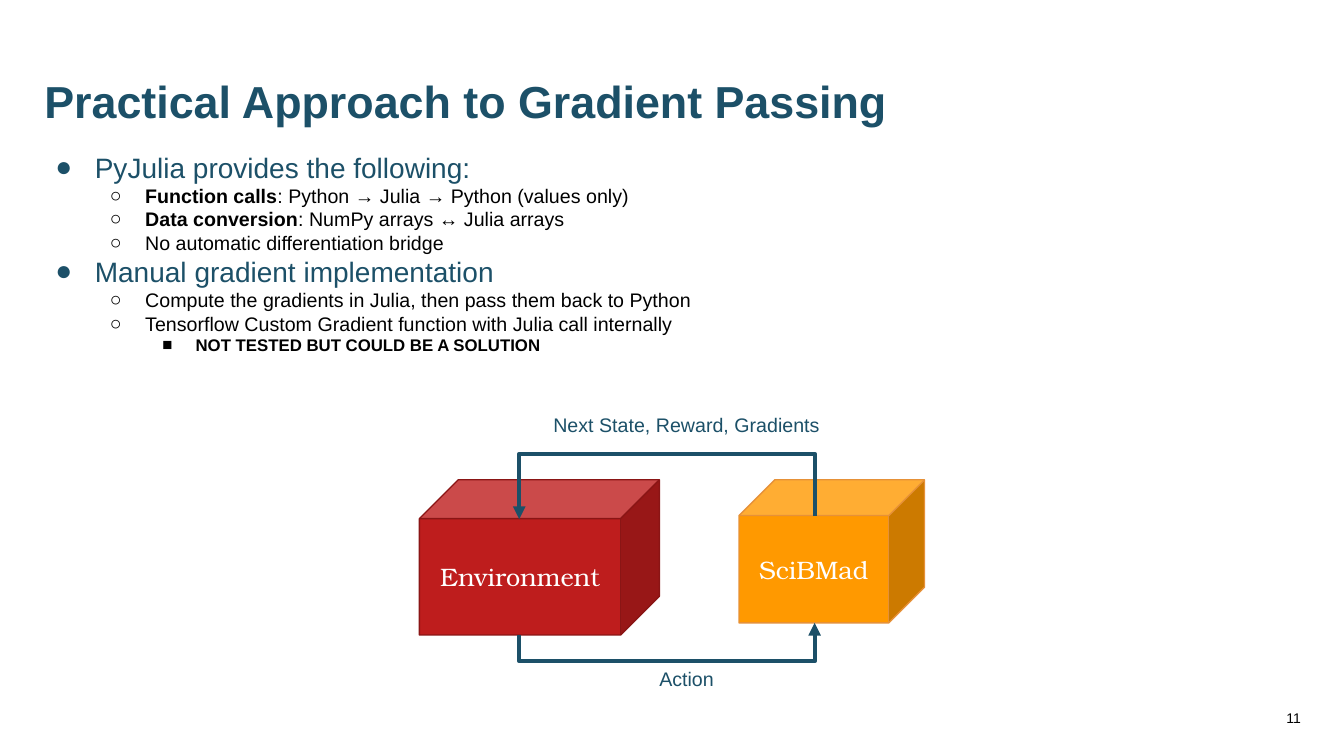
from lxml import etree
from pptx import Presentation
from pptx.dml.color import RGBColor
from pptx.enum.shapes import MSO_CONNECTOR, MSO_SHAPE
from pptx.enum.text import MSO_ANCHOR, MSO_AUTO_SIZE, PP_ALIGN
from pptx.oxml.ns import qn
from pptx.util import Inches, Pt

ELBOW, CUBE = MSO_CONNECTOR.ELBOW, MSO_SHAPE.CUBE
TOP, MIDDLE, BOTTOM = MSO_ANCHOR.TOP, MSO_ANCHOR.MIDDLE, MSO_ANCHOR.BOTTOM
LEFT, CENTER, RIGHT = PP_ALIGN.LEFT, PP_ALIGN.CENTER, PP_ALIGN.RIGHT
NO_FIT = MSO_AUTO_SIZE.NONE

TEAL = RGBColor(0x1C, 0x50, 0x68)
BLACK = RGBColor(0x00, 0x00, 0x00)
WHITE = RGBColor(0xFF, 0xFF, 0xFF)
RED = RGBColor(0xBE, 0x1D, 0x1D)
DARK_RED = RGBColor(0x8A, 0x15, 0x15)
ORANGE = RGBColor(0xFF, 0x99, 0x00)
DARK_ORANGE = RGBColor(0xE6, 0x91, 0x38)


def place(shape, left, top, width, height):
    shape.left, shape.top = Inches(left), Inches(top)
    shape.width, shape.height = Inches(width), Inches(height)


def add_run(paragraph, text, size, color, bold=False, font="Arial"):
    run = paragraph.add_run()
    run.text = text
    run.font.name, run.font.size, run.font.bold = font, Pt(size), bold
    run.font.color.rgb = color


prs = Presentation()
prs.slide_width, prs.slide_height = Inches(13.33), Inches(7.5)
slide = prs.slides.add_slide(prs.slide_layouts[1])
title, body = slide.placeholders

# Title
place(title, 0.34, 0.58, 12.08, 0.74)
title.text_frame.auto_size = NO_FIT
title.text_frame.vertical_anchor = BOTTOM
heading = title.text_frame.paragraphs[0]
heading.alignment, heading.line_spacing = LEFT, 0.9
add_run(heading, "Practical Approach to Gradient Passing", 32, TEAL, True)

# Bullet list: level and (text, bold) runs
points = [
    (0, [("PyJulia provides the following:", False)]),
    (1, [("Function calls", True), (": Python → Julia → Python (values only)", False)]),
    (1, [("Data conversion", True), (": NumPy arrays ↔ Julia arrays", False)]),
    (1, [("No automatic differentiation bridge", False)]),
    (0, [("Manual gradient implementation", False)]),
    (1, [("Compute the gradients in Julia, then pass them back to Python", False)]),
    (1, [("Tensorflow Custom Gradient function with Julia call internally", False)]),
    (2, [("NOT TESTED BUT COULD BE A SOLUTION", True)]),
]
# Per level: size, colour, bullet, hanging indent
levels = [(20, TEAL, "●", 0.39), (14, BLACK, "○", 0.35), (12, BLACK, "■", 0.33)]

place(body, 0.34, 1.44, 12.66, 5.35)
body.text_frame.auto_size = NO_FIT
body.text_frame.vertical_anchor = TOP
for i, (level, pieces) in enumerate(points):
    point = body.text_frame.paragraphs[0] if i == 0 else body.text_frame.add_paragraph()
    size, color, bullet, hang = levels[level]
    point.level = level
    point.space_before = point.space_after = Pt(0)
    props = point._p.get_or_add_pPr()
    props.set("marL", str(Inches(0.5 * (level + 1))))
    props.set("indent", str(-Inches(hang)))
    bullet_color = etree.SubElement(props, qn("a:buClr"))
    etree.SubElement(bullet_color, qn("a:srgbClr"), val=str(color))
    etree.SubElement(props, qn("a:buFont"), typeface="Arial")
    etree.SubElement(props, qn("a:buChar"), char=bullet)
    for text, bold in pieces:
        add_run(point, text, size, color, bold)

# Environment and simulator cubes
for name, left, width, height, fill, edge in [
    ("Environment", 4.16, 2.38, 1.54, RED, DARK_RED),
    ("SciBMad", 7.33, 1.84, 1.42, ORANGE, DARK_ORANGE),
]:
    cube = slide.shapes.add_shape(
        CUBE, Inches(left), Inches(4.76), Inches(width), Inches(height))
    cube.shadow.inherit = False
    cube.adjustments[0] = 0.25
    cube.fill.solid()
    cube.fill.fore_color.rgb = fill
    cube.line.color.rgb, cube.line.width = edge, Pt(1)
    cube.text_frame.word_wrap = True
    cube.text_frame.vertical_anchor = MIDDLE
    cube_label = cube.text_frame.paragraphs[0]
    cube_label.alignment = CENTER
    add_run(cube_label, name, 18, WHITE, font="TeX Gyre Bonum")

# Loop arrows: elbows turned a quarter so that their middle leg lies at bend_y
for x1, y1, x2, y2, bend_y in [
    (5.15, 6.3, 8.08, 6.18, 6.56),
    (8.08, 5.12, 5.15, 5.15, 4.5),
]:
    rise, span = abs(y2 - y1), abs(x2 - x1)
    arrow = slide.shapes.add_connector(ELBOW, 0, 0, 0, 0)
    place(arrow, (x1 + x2 - rise) / 2, (y1 + y2 - span) / 2, rise, span)
    arrow.line.color.rgb, arrow.line.width = TEAL, Pt(3)
    arrow_props = arrow._element.spPr
    quarter_turns = 3 if bend_y > y1 else 1
    arrow_props.find(qn("a:xfrm")).set("rot", str(quarter_turns * 5400000))
    guides = arrow_props.find(qn("a:prstGeom")).get_or_add_avLst()
    bend = round(-abs(bend_y - y1) / rise * 100000)
    etree.SubElement(guides, qn("a:gd"), name="adj1", fmla=f"val {bend}")
    etree.SubElement(arrow_props.find(qn("a:ln")), qn("a:tailEnd"), type="triangle")
    etree.SubElement(arrow_props, qn("a:effectLst"))

# Arrow labels and page number
for text, left, top, width, height, size, color, align, anchor, inset in [
    ("Next State, Reward, Gradients", 4.85, 4, 3.92, 0.54, 14, TEAL, CENTER, TOP, 0.1),
    ("Action", 5.54, 6.52, 2.54, 0.54, 14, TEAL, CENTER, TOP, 0.1),
    ("11", 10, 6.92, 3, 0.4, 10, BLACK, RIGHT, MIDDLE, 0.05),
]:
    frame = slide.shapes.add_textbox(
        Inches(left), Inches(top), Inches(width), Inches(height)).text_frame
    frame.word_wrap = True
    frame.vertical_anchor = anchor
    frame.margin_top = frame.margin_bottom = Inches(inset)
    label = frame.paragraphs[0]
    label.alignment = align
    add_run(label, text, size, color)

prs.save("out.pptx")
